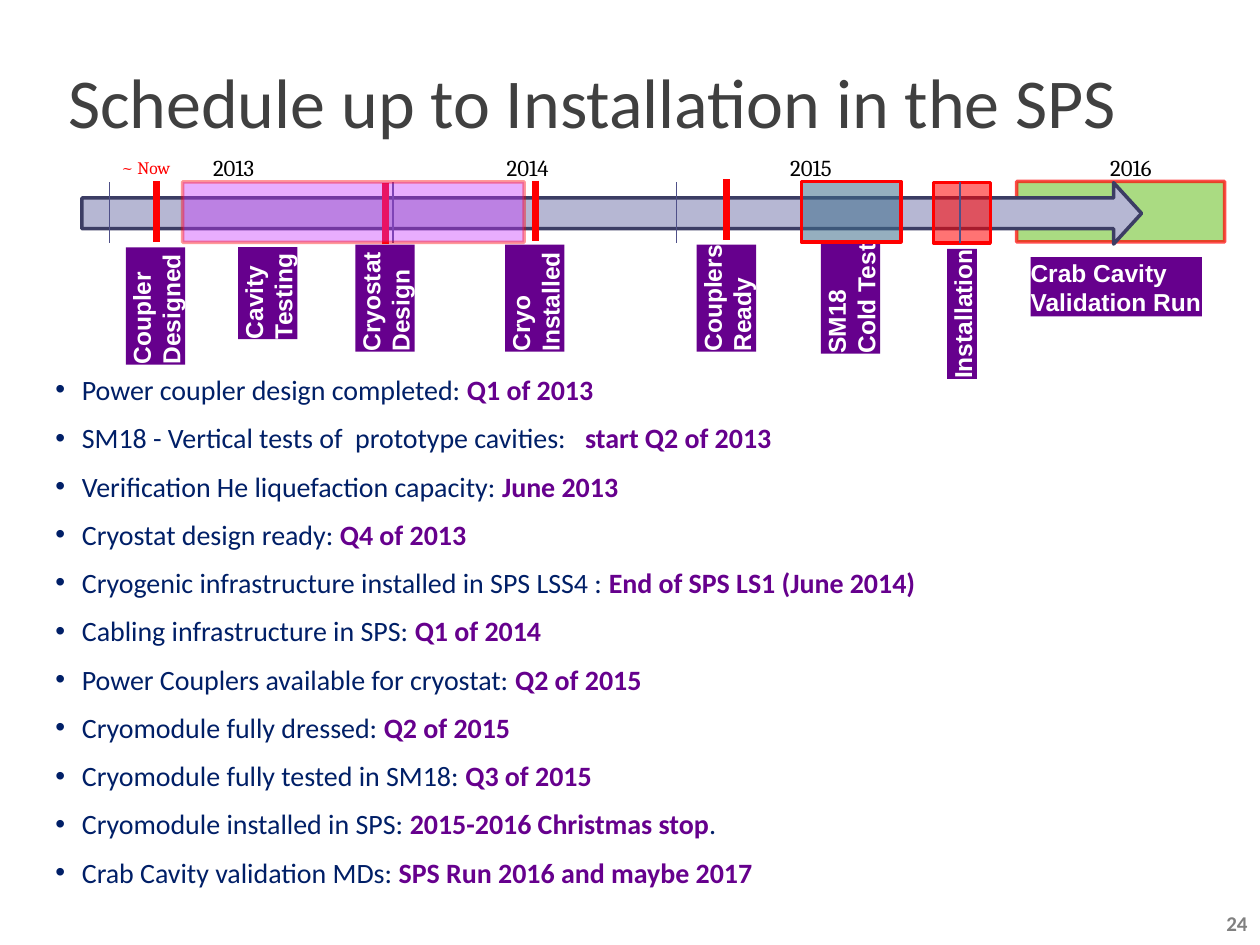
from typing import NamedTuple

from lxml import etree
from pptx import Presentation
from pptx.dml.color import RGBColor
from pptx.enum.shapes import MSO_CONNECTOR, MSO_SHAPE
from pptx.enum.text import MSO_ANCHOR, MSO_AUTO_SIZE, PP_ALIGN
from pptx.oxml.ns import qn
from pptx.util import Pt

RECTANGLE = MSO_SHAPE.RECTANGLE
RIGHT_ARROW = MSO_SHAPE.RIGHT_ARROW
STRAIGHT = MSO_CONNECTOR.STRAIGHT
TOP, MIDDLE, BOTTOM = MSO_ANCHOR.TOP, MSO_ANCHOR.MIDDLE, MSO_ANCHOR.BOTTOM
LEFT, RIGHT = PP_ALIGN.LEFT, PP_ALIGN.RIGHT
FIT_SHAPE = MSO_AUTO_SIZE.SHAPE_TO_FIT_TEXT

PURPLE, NAVY, RED = "66008D", "001F67", "FF0000"
INDENT = 15.12


class Frame(NamedTuple):
    left: float
    top: float
    width: float
    height: float


class Style(NamedTuple):
    font: str
    size: float
    color: str
    bold: bool = False


class Band(NamedTuple):
    frame: Frame
    fill: str
    fill_opacity: int
    line_opacity: int = 100


class Tag(NamedTuple):
    text: str
    frame: Frame
    rotation: int = 270


class Milestone(NamedTuple):
    task: str
    date: str
    ending: str = ""


TAG_STYLE = Style("Arial", 14, "FFFFFF", True)
YEAR_STYLE = Style("Cambria", 13, "000000")
TASK_STYLE = Style("Calibri", 16, NAVY)
DATE_STYLE = Style("Calibri", 16, PURPLE, True)

VALIDATION = Band(Frame(581, 103.7, 118.8, 34.6), "86CD4D", 70, 70)
INSTALLATION = Band(Frame(533.5, 104.4, 32.4, 34.6), RED, 55)
COLD_TEST = Band(Frame(457.9, 103.7, 56.9, 34.6), "3F6E8C", 55)
CAVITY_TESTING = Band(Frame(104.4, 103.9, 195.1, 34.6), "C632FD", 40, 40)

TAGS = [
    Tag("Coupler\nDesigned", Frame(55.4, 157.9, 67, 33.9)),
    Tag("Cavity\nTesting", Frame(126.7, 150.5, 52.6, 33.9)),
    Tag("Cryostat\nDesign", Frame(189.4, 153.4, 61.2, 33.9)),
    Tag("Cryo\nInstalled", Frame(275, 153.4, 61.2, 33.9)),
    Tag("Couplers\nReady", Frame(384.5, 153.4, 61.2, 33.9)),
    Tag("SM18\nCold Test", Frame(454.3, 153.4, 63.4, 33.9)),
    Tag("Installation", Frame(512.6, 170.8, 74.2, 17.1)),
    Tag("Crab Cavity\nValidation Run", Frame(588.9, 146.9, 97.9, 33.9), 0),
]
YEARS = {"2013": 119.5, "2014": 287.3, "2015": 449.3, "2016": 632.2}
MARKERS = [(89.3, 103.7), (220.3, 104.4), (306, 103.2), (415.4, 102.5)]

MILESTONES = [
    Milestone("Power coupler design completed: ", "Q1 of 2013"),
    Milestone("SM18 - Vertical tests of  prototype cavities:   ", "start Q2 of 2013"),
    Milestone("Verification He liquefaction capacity: ", "June 2013"),
    Milestone("Cryostat design ready: ", "Q4 of 2013"),
    Milestone("Cryogenic infrastructure installed in SPS LSS4 : ",
              "End of SPS LS1 (June 2014)"),
    Milestone("Cabling infrastructure in SPS: ", "Q1 of 2014"),
    Milestone("Power Couplers available for cryostat: ", "Q2 of 2015"),
    Milestone("Cryomodule fully dressed: ", "Q2 of 2015"),
    Milestone("Cryomodule fully tested in SM18: ", "Q3 of 2015"),
    Milestone("Cryomodule installed in SPS: ", "2015-2016 Christmas stop", "."),
    Milestone("Crab Cavity validation MDs: ", "SPS Run 2016 and maybe 2017"),
]


def set_color(color_format, color: str, opacity: int = 100) -> None:
    color_format.rgb = RGBColor.from_string(color)


def set_fill(fill, color: str, opacity: int = 100) -> None:
    fill.solid()
    set_color(fill.fore_color, color)
    if opacity < 100:
        for node in fill._xPr.iter(qn("a:solidFill")):
            if node.getparent() is fill._xPr:
                etree.SubElement(node[0], qn("a:alpha"), val=str(opacity * 1000))


def format_span(span, style: Style) -> None:
    span.font.name = style.font
    span.font.size = Pt(style.size)
    span.font.bold = style.bold
    set_color(span.font.color, style.color)


def set_margins(text_frame, horizontal: float, vertical: float) -> None:
    text_frame.margin_left = text_frame.margin_right = Pt(horizontal)
    text_frame.margin_top = text_frame.margin_bottom = Pt(vertical)


def write_text(text_frame, text: str, style: Style, align=LEFT) -> None:
    text_frame.text = text
    for para in text_frame.paragraphs:
        para.alignment = align
        for span in para.runs:
            format_span(span, style)


def add_box(page, frame: Frame, margins: tuple[float, float], anchor=TOP):
    box = page.shapes.add_textbox(*map(Pt, frame))
    text_frame = box.text_frame
    text_frame.word_wrap = True
    text_frame.vertical_anchor = anchor
    set_margins(text_frame, *margins)
    return text_frame


def add_plain_shape(page, kind, frame: Frame, fill: str, opacity: int = 100):
    shape = page.shapes.add_shape(kind, *map(Pt, frame))
    shape.shadow.inherit = False
    set_fill(shape.fill, fill, opacity)
    return shape


def add_band(page, band: Band) -> None:
    shape = add_plain_shape(page, RECTANGLE, band.frame, band.fill, band.fill_opacity)
    shape.line.width = Pt(2)
    set_fill(shape.line.fill, RED, band.line_opacity)


def add_tag(page, tag: Tag) -> None:
    shape = add_plain_shape(page, RECTANGLE, tag.frame, PURPLE)
    shape.line.fill.background()
    shape.rotation = tag.rotation
    text_frame = shape.text_frame
    set_margins(text_frame, 0, 0)
    text_frame.vertical_anchor = BOTTOM
    text_frame.word_wrap = False
    text_frame.auto_size = FIT_SHAPE
    write_text(text_frame, tag.text, TAG_STYLE)


def add_tick(page, x: float, top: float, color: str, width: float) -> None:
    tick = page.shapes.add_connector(STRAIGHT, Pt(x), Pt(top), Pt(x), Pt(top + 34.8))
    set_color(tick.line.color, color)
    tick.line.width = Pt(width)
    etree.SubElement(tick._element.spPr, qn("a:effectLst"))


def add_bullet(para) -> None:
    properties = para._p.get_or_add_pPr()
    properties.set("marL", str(Pt(INDENT)))
    properties.set("indent", str(-Pt(INDENT)))
    bullet_color = etree.SubElement(properties, qn("a:buClr"))
    etree.SubElement(bullet_color, qn("a:srgbClr"), val=NAVY)
    etree.SubElement(properties, qn("a:buFont"), typeface="Arial")
    etree.SubElement(properties, qn("a:buChar"), char="•")


def add_milestones(page) -> None:
    text_frame = add_box(page, Frame(31.7, 208.1, 656.6, 304.6), (0, 0), MIDDLE)
    for index, milestone in enumerate(MILESTONES):
        para = text_frame.add_paragraph() if index else text_frame.paragraphs[0]
        add_bullet(para)
        if index:
            para.space_before = Pt(8.4)
        for text, style in zip(milestone, (TASK_STYLE, DATE_STYLE, TASK_STYLE)):
            if text:
                span = para.add_run()
                span.text = text
                format_span(span, style)


def add_timeline(page) -> None:
    add_band(page, VALIDATION)
    for tag in TAGS:
        add_tag(page, tag)
    arrow = add_plain_shape(page, RIGHT_ARROW, Frame(46.8, 104.4, 605.5, 35.1), "B6B7D3")
    arrow.adjustments[0], arrow.adjustments[1] = 0.5, 0.455
    set_color(arrow.line.color, "3C3D64")
    arrow.line.width = Pt(2)
    add_band(page, INSTALLATION)
    add_band(page, COLD_TEST)
    for index in range(4):
        add_tick(page, 62.6 + 162 * index, 104.2, "4F5088", 0.75)
    for x, top in MARKERS:
        add_tick(page, x, top, RED, 4)
    add_band(page, CAVITY_TESTING)
    for year, left in YEARS.items():
        write_text(add_box(page, Frame(left, 85.7, 42.5, 20.9), (2.2, 2.2)), year, YEAR_STYLE)
    now = add_box(page, Frame(67, 87.8, 58.3, 17.3), (2.2, 2.2))
    write_text(now, "~ Now", Style("Cambria", 10, RED))


def main() -> None:
    deck = Presentation()
    deck.slide_width, deck.slide_height = Pt(720), Pt(540)
    page = deck.slides.add_slide(deck.slide_layouts[6])
    add_milestones(page)
    title = add_box(page, Frame(36, 21.6, 648, 72), (2.9, 0), MIDDLE)
    write_text(title, "Schedule up to Installation in the SPS", Style("Calibri", 40, "404040"))
    add_timeline(page)
    number = add_box(page, Frame(684, 514.8, 36, 25.2), (7.2, 0), MIDDLE)
    write_text(number, "24", Style("Calibri", 12, "808080", True), RIGHT)
    deck.save("out.pptx")


if __name__ == "__main__":
    main()
